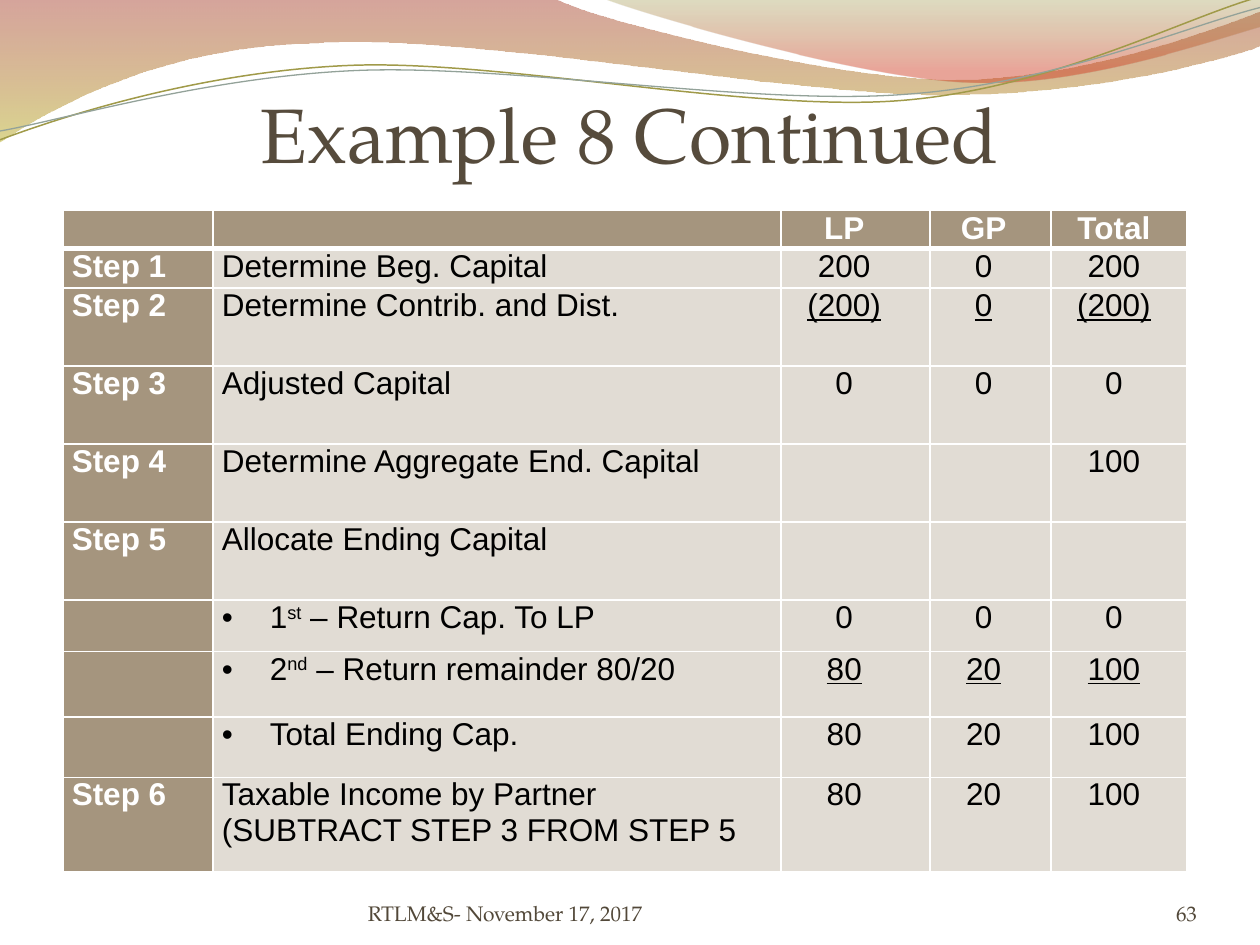
"""Build the partnership capital example slide."""
from dataclasses import dataclass

from lxml import etree
from pptx import Presentation
from pptx.dml.color import RGBColor
from pptx.enum import text
from pptx.oxml import ns
from pptx.util import Emu, Inches, Pt

ALIGN, ANCHOR = text.PP_ALIGN, text.MSO_ANCHOR


@dataclass(frozen=True)
class Theme:
    """Colours, fonts and type sizes of the slide."""
    heading_font: str = "TeX Gyre Pagella"
    body_font: str = "Arial"
    title_size: int = 44
    body_size: int = 18
    footer_size: int = 12
    title: str = "564B3C"
    footer: str = "524839"
    header_fill: str = "A5957E"
    body_fill: str = "E1DCD4"
    light: str = "FFFFFF"
    dark: str = "000000"


@dataclass(frozen=True)
class Box:
    """A region measured on a grid of 100 columns by 75 rows."""
    left: float
    top: float
    width: float
    height: float

    def frame(self):
        """Return the region as four lengths."""
        return tuple(grid(v) for v in (self.left, self.top, self.width, self.height))


THEME = Theme()
SLIDE = Box(0, 0, 100, 75)

RIBBONS = [
    ([[(0, 0)], [(44, -0.1)], [(47.6, 1.7), (66.4, 6.3), (75.8, 6.3)],
      [(85.3, 6.3), (95.8, 2.6), (100, 0.9)], [(100.1, 3.6)],
      [(98.3, 4.4), (87, 7.6), (74.6, 7.5)], [(62.2, 7.5), (38.2, 2.8), (25.7, 3.4)],
      [(12.9, 3.6), (4.6, 8.3), (-0.1, 11.3)]],
     [(0, "A43724", 45), (1, "BDB333", 55)]),
    ([[(47.9, -0.1)], [(50.9, 1.1), (68.2, 6.2), (76.9, 6.5)],
      [(85.6, 6.9), (96.1, 3.2), (100, 2.1)], [(100, 0)]],
     [(0, "918A33", 30), (0.8, "D0381E", 45)]),
]
STRANDS = [
    ([[(0, 11.1)], [(4.8, 9.3), (15.8, 5.7), (27.7, 5.2)],
      [(39.5, 4.7), (59.3, 8.9), (71.3, 8)], [(83.3, 7.1), (93.8, 1.5), (99.8, -0.2)]],
     "A09A49", 0.85),
    ([[(0, 10.4)], [(4.7, 9.6), (16.4, 6.1), (28.3, 5.6)],
      [(40.3, 5.1), (59.7, 8.4), (71.7, 7.5)], [(83.6, 6.7), (94.1, 2.1), (100, 0.6)]],
     "93A299", 0.75),
]

COLUMNS = [11.9, 45, 11.8, 9.6, 10.75]
ROW_HEIGHTS = [3.05, 3.1, 6.2, 6.2, 6.2, 6.2, 4.1, 5.2, 4.8, 7.5]
RIGHT_INDENTS = [0, 0, 1.8, 1.1, 0.8]
ROWS = [
    ("", "", "LP", "GP", "Total"),
    ("Step 1", "Determine Beg. Capital", "200", "0", "200"),
    ("Step 2", "Determine Contrib. and Dist.", "(200)", "0", "(200)"),
    ("Step 3", "Adjusted Capital", "0", "0", "0"),
    ("Step 4", "Determine Aggregate End. Capital", "", "", "100"),
    ("Step 5", "Allocate Ending Capital", "", "", ""),
    ("", "1^st^ – Return Cap. To LP", "0", "0", "0"),
    ("", "2^nd^ – Return remainder 80/20", "80", "20", "100"),
    ("", "Total Ending Cap.", "80", "20", "100"),
    ("Step 6", "Taxable Income by Partner\n(SUBTRACT STEP 3 FROM STEP 5", "80", "20", "100"),
]
UNDERLINED_ROWS = {2, 7}
BULLET_ROWS = {6, 7, 8}


def grid(units):
    """Turn grid units into a length."""
    return Inches(units / 10)


def assign(target, values):
    """Set each named attribute on the target."""
    for name, value in values.items():
        setattr(target, name, value)


def style_font(font, size, name, colour, **extra):
    """Apply size, typeface, colour and further font values."""
    assign(font, {"size": Pt(size), "name": name, **extra})
    font.color.rgb = RGBColor.from_string(colour)


def draw_outline(slide, box, outline, close):
    """Draw lines and cubic curves relative to the box, as one freeform."""
    points = [(grid(box.left + x), grid(box.top + y)) for part in outline for x, y in part]
    builder = slide.shapes.build_freeform(*points[0], scale=1.0)
    builder.add_line_segments(points[1:], close=close)
    shape = builder.convert_to_shape()
    shape.shadow.inherit = False
    steps = iter(list(shape.element.spPr.iter(ns.qn("a:lnTo"))))
    for part in outline[1:]:
        first, *others = [next(steps) for _ in part]
        if others:
            first.tag = ns.qn("a:cubicBezTo")
            for other in others:
                first.append(other[0])
                other.getparent().remove(other)
    return shape


def add_waves(slide, box):
    """Place the translucent ribbons and thin strands."""
    for outline, stops in RIBBONS:
        shape = draw_outline(slide, box, outline, True)
        shape.line.fill.background()
        shape.fill.gradient()
        shape.fill.gradient_angle = 270
        for stop, (position, colour, _) in zip(shape.fill.gradient_stops, stops):
            stop.position = position
            stop.color.rgb = RGBColor.from_string(colour)
        colours = shape.element.spPr.iter(ns.qn("a:srgbClr"))
        for element, (_, _, opacity) in zip(colours, stops):
            etree.SubElement(element, ns.qn("a:alpha"), val=str(opacity * 1000))
    for outline, colour, width in STRANDS:
        shape = draw_outline(slide, box, outline, False)
        shape.fill.background()
        shape.line.color.rgb = RGBColor.from_string(colour)
        shape.line.width = Pt(width)


def add_label(slide, box, words, size, colour, alignment):
    """Place one bottom-anchored line of heading type."""
    frame = slide.shapes.add_textbox(*box.frame()).text_frame
    assign(frame, {"word_wrap": True, "vertical_anchor": ANCHOR.BOTTOM, "margin_left": 0,
                   "margin_right": 0, "margin_top": 0, "margin_bottom": 0})
    paragraph = frame.paragraphs[0]
    paragraph.alignment = alignment
    run = paragraph.add_run()
    run.text = words
    style_font(run.font, size, THEME.heading_font, colour)


def add_borders(cell, is_header):
    """Edge a cell in white, heavier where the header meets the body."""
    properties = cell._tc.get_or_add_tcPr()
    for index, side in enumerate(("lnL", "lnR", "lnT", "lnB")):
        width = Pt(3 if is_header and side == "lnB" else 1)
        line = etree.Element(ns.qn(f"a:{side}"), w=str(width))
        fill = etree.SubElement(line, ns.qn("a:solidFill"))
        etree.SubElement(fill, ns.qn("a:srgbClr"), val=THEME.light)
        properties.insert(index, line)


def fill_cell(cell, words, row, column):
    """Write and format one table cell."""
    strong = row == 0 or column == 0
    assign(cell, {"margin_left": Inches(0.07), "margin_right": Inches(0.07),
                  "margin_top": 0, "margin_bottom": 0})
    cell.fill.solid()
    cell.fill.fore_color.rgb = RGBColor.from_string(
        THEME.header_fill if strong else THEME.body_fill)
    add_borders(cell, row == 0)
    cell.text = words
    for paragraph in cell.text_frame.paragraphs:
        paragraph.alignment = (ALIGN.JUSTIFY, ALIGN.LEFT, *[ALIGN.CENTER] * 3)[column]
        properties = paragraph._p.get_or_add_pPr()
        if RIGHT_INDENTS[column]:
            properties.set("marR", str(grid(RIGHT_INDENTS[column])))
        if column == 1 and row in BULLET_ROWS:
            properties.set("marL", str(grid(3.8)))
            properties.set("indent", str(grid(-3.8)))
            etree.SubElement(properties, ns.qn("a:buFont"), typeface=THEME.body_font)
            etree.SubElement(properties, ns.qn("a:buChar"), char="•")
        pieces = paragraph.text.split("^")
        paragraph.clear()
        if pieces == [""]:
            paragraph.font.size = Pt(THEME.body_size)
            continue
        for index, piece in enumerate(pieces):
            run = paragraph.add_run()
            run.text = piece
            style_font(run.font, THEME.body_size, THEME.body_font,
                       THEME.light if strong else THEME.dark, bold=strong,
                       underline=column > 1 and row in UNDERLINED_ROWS)
            if index % 2:
                run._r.get_or_add_rPr().set("baseline", "30000")


def add_capital_table(slide, box):
    """Place the table of steps and partner amounts."""
    table = slide.shapes.add_table(len(ROWS), len(COLUMNS), *box.frame()).table
    assign(table, {"first_row": True, "first_col": True, "horz_banding": False})
    for column, share in zip(table.columns, COLUMNS):
        column.width = Emu(round(grid(box.width) * share / sum(COLUMNS)))
    for row, share in zip(table.rows, ROW_HEIGHTS):
        row.height = Emu(round(grid(box.height) * share / sum(ROW_HEIGHTS)))
    for row, values in enumerate(ROWS):
        for column, words in enumerate(values):
            fill_cell(table.cell(row, column), words, row, column)


def main():
    """Assemble and save the slide."""
    presentation = Presentation()
    presentation.slide_width, presentation.slide_height = SLIDE.frame()[2:]
    slide = presentation.slides.add_slide(presentation.slide_layouts[6])
    add_waves(slide, SLIDE)
    add_label(slide, Box(5, 7.7, 90, 6.5), "Example 8 Continued",
              THEME.title_size, THEME.title, ALIGN.CENTER)
    add_capital_table(slide, Box(5, 16.7, 89.2, 52.5))
    for box, words, alignment in (
            (Box(86.7, 69.5, 8.3, 4), "63", ALIGN.RIGHT),
            (Box(29.2, 69.5, 36.7, 4), "RTLM&S- November 17, 2017", ALIGN.LEFT)):
        add_label(slide, box, words, THEME.footer_size, THEME.footer, alignment)
    presentation.save("out.pptx")


if __name__ == "__main__":
    main()
